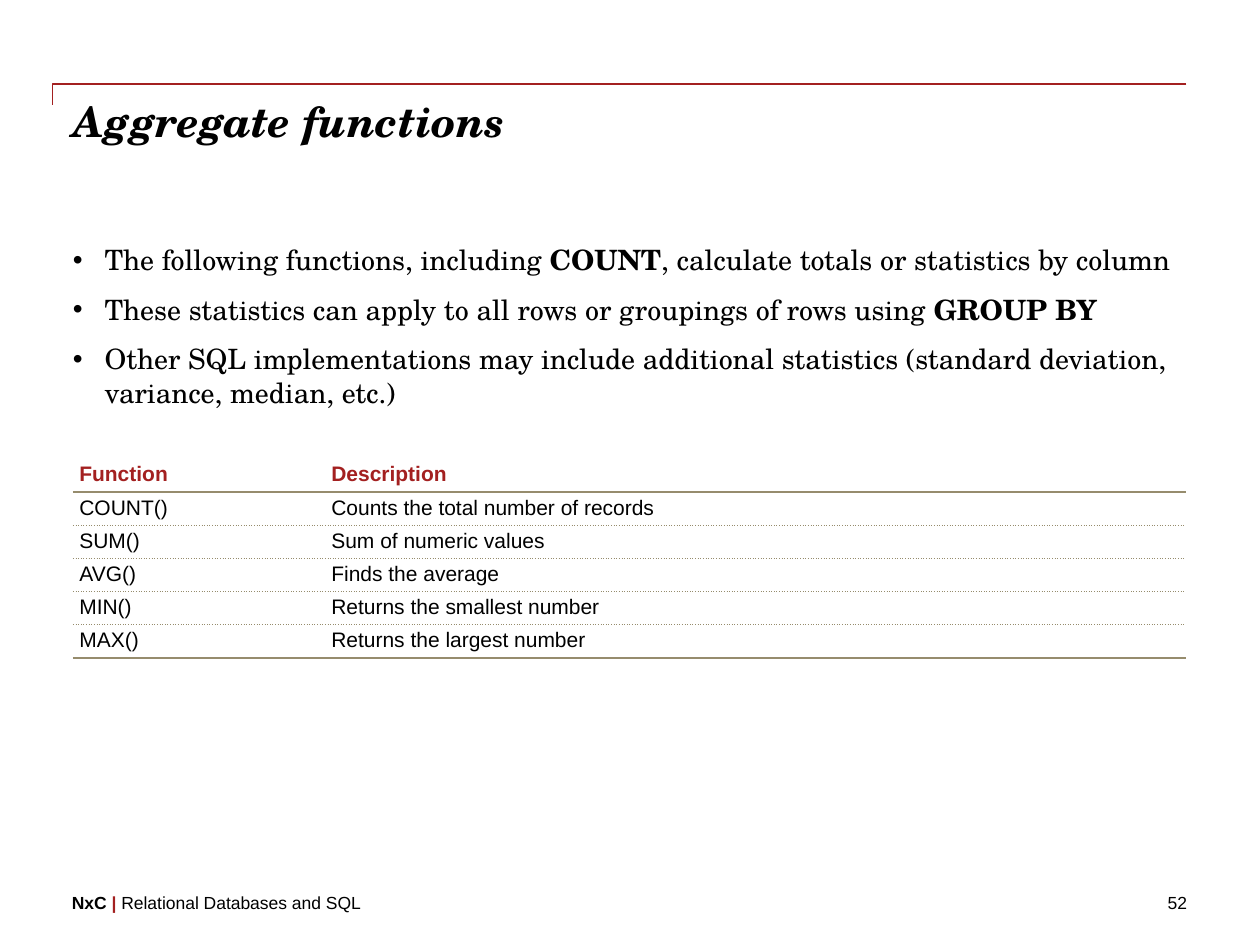
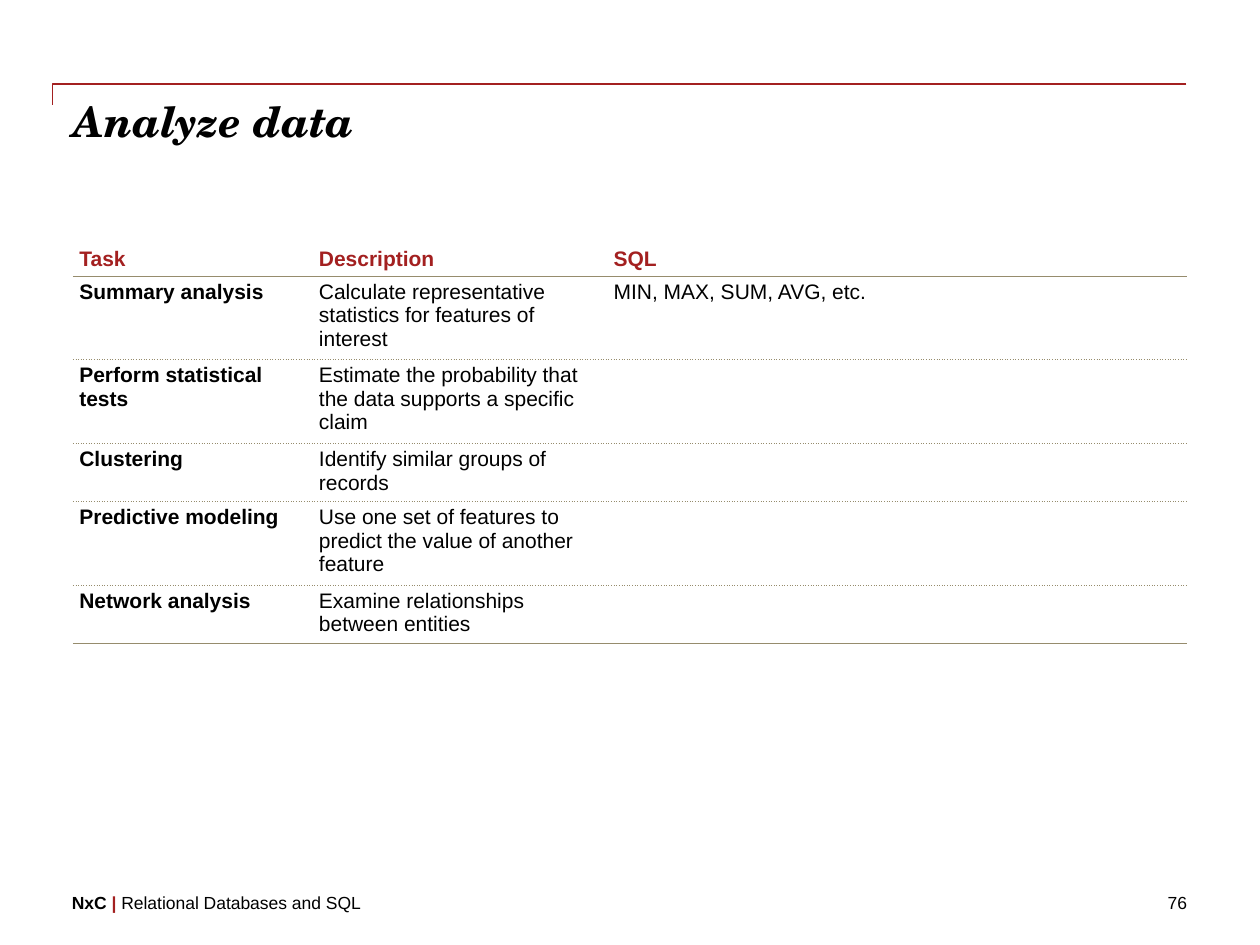
from lxml.etree import SubElement
from pptx import Presentation
from pptx.dml.color import RGBColor
from pptx.enum.shapes import MSO_CONNECTOR as Connector
from pptx.enum.text import PP_ALIGN as Align
from pptx.oxml.ns import qn
from pptx.util import Cm, Pt

# Shared style
RED, BLACK, RULE = "A32020", "000000", "968C6D"
SERIF, SANS = "TeX Gyre Schola", "Arial"
LEFT, WIDTH = 1.47, 22.44
BODY_TOP = 4.9


def color(value):
    return RGBColor.from_string(value)


def style(font, name, size, value=BLACK, bold=False, italic=False):
    font.name, font.size = name, Pt(size)
    font.bold, font.italic = bold, italic
    font.color.rgb = color(value)


def add_text(slide, left, top, width, height):
    frame = slide.shapes.add_textbox(Cm(left), Cm(top), Cm(width), Cm(height)).text_frame
    frame.word_wrap = True
    frame.margin_left = frame.margin_right = frame.margin_top = frame.margin_bottom = 0
    return frame


def add_run(paragraph, text, bold=False, value=BLACK):
    run = paragraph.add_run()
    run.text = text
    run.font.bold = bold
    run.font.color.rgb = color(value)


def add_bracket(slide, left, top, width, drop):
    """Red rule across the top with a short drop at its left end."""
    line = slide.shapes.add_connector(
        Connector.ELBOW, Cm(left + width), Cm(top), Cm(left), Cm(top + drop))
    line.line.color.rgb = color(RED)
    line.line.width = Pt(1)
    properties = line._element.spPr
    properties.find(qn("a:prstGeom")).set("prst", "bentConnector2")
    SubElement(properties, qn("a:effectLst"))


def add_title(slide, text, left, top, width, height):
    paragraph = add_text(slide, left, top, width, height).paragraphs[0]
    paragraph.text = text
    style(paragraph.font, SERIF, 24, bold=True, italic=True)


def add_footer(slide, number, left, top, width, height):
    number_width = 4.24
    course = add_text(slide, left, top, width - number_width, height).paragraphs[0]
    style(course.font, SANS, 10)
    add_run(course, "NxC", bold=True)
    add_run(course, " | ", bold=True, value=RED)
    add_run(course, "Relational Databases and SQL")

    page = add_text(slide, left + width - number_width, top, number_width, height).paragraphs[0]
    page.text = str(number)
    page.alignment = Align.RIGHT
    style(page.font, SANS, 10)


def add_bullets(slide, items, left, top, width, height):
    """Each item is a list of (text, bold) pieces."""
    frame = add_text(slide, left, top, width, height)
    for index, pieces in enumerate(items):
        paragraph = frame.add_paragraph() if index else frame.paragraphs[0]
        paragraph.space_after = Pt(9)
        style(paragraph.font, SERIF, 16)
        properties = paragraph._p.get_or_add_pPr()
        indent = Cm(0.64)
        properties.set("marL", str(indent))
        properties.set("indent", str(-indent))
        bullet_font = properties.makeelement(qn("a:buFont"), {"typeface": SANS})
        bullet = properties.makeelement(qn("a:buChar"), {"char": "•"})
        defaults = properties.find(qn("a:defRPr"))
        defaults.addprevious(bullet_font)
        defaults.addprevious(bullet)
        for text, bold in pieces:
            add_run(paragraph, text, bold)


def set_border(cell, side, dash=None):
    """Draw a thin rule on one side of a cell, or none if dash is missing."""
    line = SubElement(cell._tc.get_or_add_tcPr(), qn(f"a:ln{side}"), w=str(Pt(0.75)))
    if dash is None:
        SubElement(line, qn("a:noFill"))
        return
    fill = SubElement(line, qn("a:solidFill"))
    SubElement(fill, qn("a:srgbClr"), val=RULE)
    SubElement(line, qn("a:prstDash"), val=dash)


def add_ruled_table(slide, rows, line_counts, columns, left, top, bold_first=False):
    """Red header, solid rules at header and end, dotted rules between."""
    heights = [0.16 + 0.47 * count for count in line_counts]
    table = slide.shapes.add_table(
        len(rows), len(columns), Cm(left), Cm(top),
        Cm(sum(columns)), Cm(sum(heights))).table
    table.first_row = table.horz_banding = False
    for column, width in zip(table.columns, columns):
        column.width = Cm(width)
    for row, height in zip(table.rows, heights):
        row.height = Cm(height)

    last = len(rows) - 1
    rules = [None, "solid"] + ["sysDot"] * (last - 1) + ["solid"]
    for row_index, texts in enumerate(rows):
        header = row_index == 0
        for column_index, text in enumerate(texts):
            cell = table.cell(row_index, column_index)
            cell.margin_left = cell.margin_right = Cm(0.13)
            cell.margin_top = cell.margin_bottom = Cm(0.08)
            set_border(cell, "L")
            set_border(cell, "R")
            set_border(cell, "T", rules[row_index])
            set_border(cell, "B", rules[row_index + 1])
            cell.fill.background()
            paragraph = cell.text_frame.paragraphs[0]
            paragraph.text = text
            paragraph.space_after = Pt(9)
            style(paragraph.font, SANS, 12, RED if header else BLACK,
                  bold=header or (bold_first and column_index == 0))


def add_base_slide(presentation, title, number):
    slide = presentation.slides.add_slide(presentation.slide_layouts[6])
    add_bracket(slide, 1.06, 1.69, 22.86, 0.42)
    add_title(slide, title, LEFT, 1.93, WIDTH, 1.02)
    add_footer(slide, number, 1.45, 17.98, 22.48, 0.43)
    return slide


def build_aggregate_slide(presentation):
    slide = add_base_slide(presentation, "Aggregate functions", 52)
    add_bullets(slide, [
        [("The following functions, including ", False), ("COUNT", True),
         (", calculate totals or statistics by column", False)],
        [("These statistics can apply to all rows or groupings of rows using ", False),
         ("GROUP BY", True)],
        [("Other SQL implementations may include additional statistics "
          "(standard deviation, variance, median, etc.)", False)],
    ], LEFT, BODY_TOP, WIDTH, 3.38)
    rows = [
        ("Function", "Description"),
        ("COUNT()", "Counts the total number of records"),
        ("SUM()", "Sum of numeric values"),
        ("AVG()", "Finds the average"),
        ("MIN()", "Returns the smallest number"),
        ("MAX()", "Returns the largest number"),
    ]
    add_ruled_table(slide, rows, [1] * len(rows), (5.08, 17.35), LEFT, 9.25)


def build_analysis_slide(presentation):
    slide = add_base_slide(presentation, "Analyze data", 76)
    rows = [
        ("Task", "Description", "SQL"),
        ("Summary analysis", "Calculate representative statistics for features of interest",
         "MIN, MAX, SUM, AVG, etc."),
        ("Perform statistical tests",
         "Estimate the probability that the data supports a specific claim", ""),
        ("Clustering", "Identify similar groups of records", ""),
        ("Predictive modeling",
         "Use one set of features to predict the value of another feature", ""),
        ("Network analysis", "Examine relationships between entities", ""),
    ]
    add_ruled_table(slide, rows, (1, 3, 3, 2, 3, 2), (4.83, 5.94, 11.68),
                    LEFT, BODY_TOP, bold_first=True)


def main():
    presentation = Presentation()
    presentation.slide_width, presentation.slide_height = Cm(25.4), Cm(19.05)
    build_aggregate_slide(presentation)
    build_analysis_slide(presentation)
    presentation.save("out.pptx")


if __name__ == "__main__":
    main()
